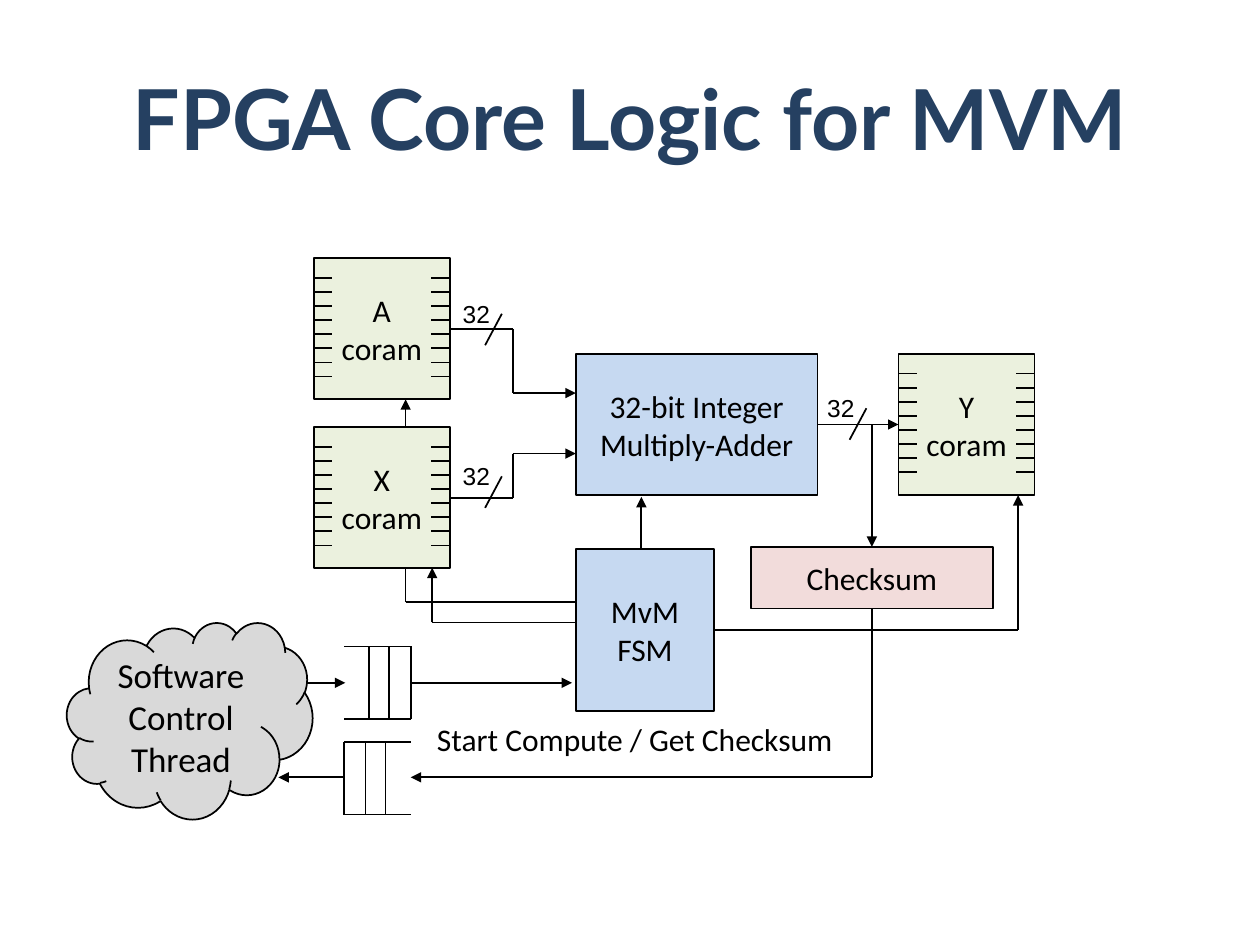
import pptx
import pptx.util
import pptx.dml.color
import pptx.enum.shapes
import pptx.enum.text
import pptx.oxml
from itertools import pairwise

Pt = pptx.util.Pt
RGBColor = pptx.dml.color.RGBColor
MSO_SHAPE = pptx.enum.shapes.MSO_SHAPE
ALIGN = pptx.enum.text.PP_ALIGN
ANCHOR = pptx.enum.text.MSO_ANCHOR
AUTO_SIZE = pptx.enum.text.MSO_AUTO_SIZE

BLACK = RGBColor(0x00, 0x00, 0x00)
NAVY = RGBColor(0x25, 0x40, 0x61)
BLUE = RGBColor(0xC6, 0xD9, 0xF1)
GREEN = RGBColor(0xEB, 0xF1, 0xDE)
PINK = RGBColor(0xF2, 0xDC, 0xDB)
GRAY = RGBColor(0xD9, 0xD9, 0xD9)

TOP, LEFT, BOTTOM, RIGHT = range(4)


class Diagram:
    font = "Calibri"
    size = 18
    weight = 1

    def __init__(self, s):
        self.s = s

    def set_text(self, sp, text, size=None, font=None, color=BLACK, bold=False, align=ALIGN.CENTER):
        tf = sp.text_frame
        tf.text = text
        for p in tf.paragraphs:
            p.alignment = align
            for r in p.runs:
                r.font.size = Pt(size or self.size)
                r.font.name = font or self.font
                r.font.color.rgb = color
                r.font.bold = bold

    def title(self, text):
        sp = self.s.shapes.title
        sp.left, sp.top, sp.width, sp.height = Pt(36), Pt(21.6), Pt(648), Pt(90)
        sp.text_frame.vertical_anchor = ANCHOR.MIDDLE
        self.set_text(sp, text, size=48, font="Lato", color=NAVY, bold=True)

    def box(self, x, y, w, h, text, fill, kind=MSO_SHAPE.RECTANGLE, size=None, parent=None):
        sp = (parent or self.s).shapes.add_shape(kind, Pt(x), Pt(y), Pt(w), Pt(h))
        sp.shadow.inherit = False
        sp.fill.solid()
        sp.fill.fore_color.rgb = fill
        sp.line.color.rgb = BLACK
        sp.line.width = Pt(self.weight)
        sp.text_frame.vertical_anchor = ANCHOR.MIDDLE
        self.set_text(sp, text, size=size)
        return sp

    def label(self, x, y, w, h, text, wrap=True, **style):
        sp = self.s.shapes.add_textbox(Pt(x), Pt(y), Pt(w), Pt(h))
        sp.text_frame.word_wrap = wrap
        sp.text_frame.auto_size = AUTO_SIZE.SHAPE_TO_FIT_TEXT
        self.set_text(sp, text, **style)

    def line(self, x1, y1, x2, y2, arrow=False, parent=None):
        cx = (parent or self.s).shapes.add_connector(
            pptx.enum.shapes.MSO_CONNECTOR.STRAIGHT, Pt(x1), Pt(y1), Pt(x2), Pt(y2))
        cx.line.color.rgb = BLACK
        cx.line.width = Pt(self.weight)
        spPr = cx._element.spPr
        if arrow:
            spPr.ln.append(pptx.oxml.parse_xml(
                '<a:tailEnd xmlns:a="http://schemas.openxmlformats.org/drawingml/2006/main" type="triangle"/>'))
        spPr.append(pptx.oxml.parse_xml(
            '<a:effectLst xmlns:a="http://schemas.openxmlformats.org/drawingml/2006/main"/>'))
        return cx

    def wire(self, *points, start=None, end=None):
        cxs = [self.line(*a, *b, arrow=b == points[-1]) for a, b in pairwise(points)]
        if start:
            cxs[0].begin_connect(*start)
        if end:
            cxs[-1].end_connect(*end)

    def coram(self, x, y, name):
        w, h, tick = 77.8, 80.6, 10.6
        grp = self.s.shapes.add_group_shape()
        sp = self.box(x, y, w, h, f"{name}\vcoram", GREEN, parent=grp)
        for left in (x, x + w - tick):
            for i in range(8):
                ty = y + 11.2 + 8.05 * i
                self.line(left, ty, left + tick, ty, parent=grp)
        return sp

    def queue(self, y, bars):
        left, right, h = 196.6, 234.7, 41.5
        grp = self.s.shapes.add_group_shape()
        for x in bars:
            self.line(x, y, x, y + h, parent=grp)
        for edge in (y, y + h):
            self.line(left, edge, right, edge, parent=grp)

    def bus(self, x, y):
        self.line(x + 9.6, y, x, y + 18)
        self.label(x - 36, y - 12.2, 62, 24.3, "32", size=14, font="Arial")


def main():
    prs = pptx.Presentation()
    prs.slide_width, prs.slide_height = Pt(720), Pt(540)
    d = Diagram(prs.slides.add_slide(prs.slide_layouts[5]))
    d.title("FPGA Core Logic for MVM")

    d.wire((329, 344.2), (231.8, 344.2), (231.8, 228.2))
    a = d.coram(179.3, 147.6, "A")
    x = d.coram(179.3, 244.1, "X")
    y = d.coram(513.4, 202.3, "Y")
    adder = d.box(329, 202.3, 138.2, 80.6, "32-bit Integer\vMultiply-Adder", BLUE)
    checksum = d.box(429.1, 312.5, 138.2, 35.3, "Checksum", PINK)
    d.queue(369.4, (211, 222.5, 234.7))
    d.queue(424, (196.6, 208.8, 220.3))

    d.wire((257.1, 187.9), (293, 187.9), (293, 224.6), (329, 224.6), start=(a, RIGHT))
    d.wire((257.1, 284.4), (293, 284.4), (293, 259.2), (329, 259.2), start=(x, RIGHT))
    d.wire((467.2, 242.6), (513.4, 242.6), start=(adder, RIGHT), end=(y, LEFT))
    d.wire((498.2, 242.6), (498.2, 312.5), end=(checksum, TOP))
    d.wire((498.2, 347.8), (498.2, 444.2), (234.7, 444.2), start=(checksum, BOTTOM))
    for bus_x, bus_y in ((277.2, 179.3), (277.2, 272.2), (485.5, 233.3)):
        d.bus(bus_x, bus_y)
    d.label(242.6, 408.2, 243.4, 28.8, "Start Compute / Get Checksum", wrap=False, align=ALIGN.LEFT)

    d.wire((234.7, 390.2), (326.9, 390.2))
    d.wire((137.5, 390.2), (197.3, 390.2))
    d.wire((196.6, 444.2), (159.1, 444.2))
    d.box(38.2, 355.7, 140.4, 112.3, "Software\vControl Thread", GRAY, kind=MSO_SHAPE.CLOUD, size=20)

    mvm = d.box(329, 313.5, 79.2, 93, "MvM\vFSM", BLUE)
    d.wire((366.5, 313.5), (366.5, 284))
    d.wire((329, 355.7), (247, 355.7), (247, 324.4))
    d.wire((408.2, 360), (581.8, 360), (581.8, 283), start=(mvm, RIGHT))
    prs.save("out.pptx")


if __name__ == "__main__":
    main()
